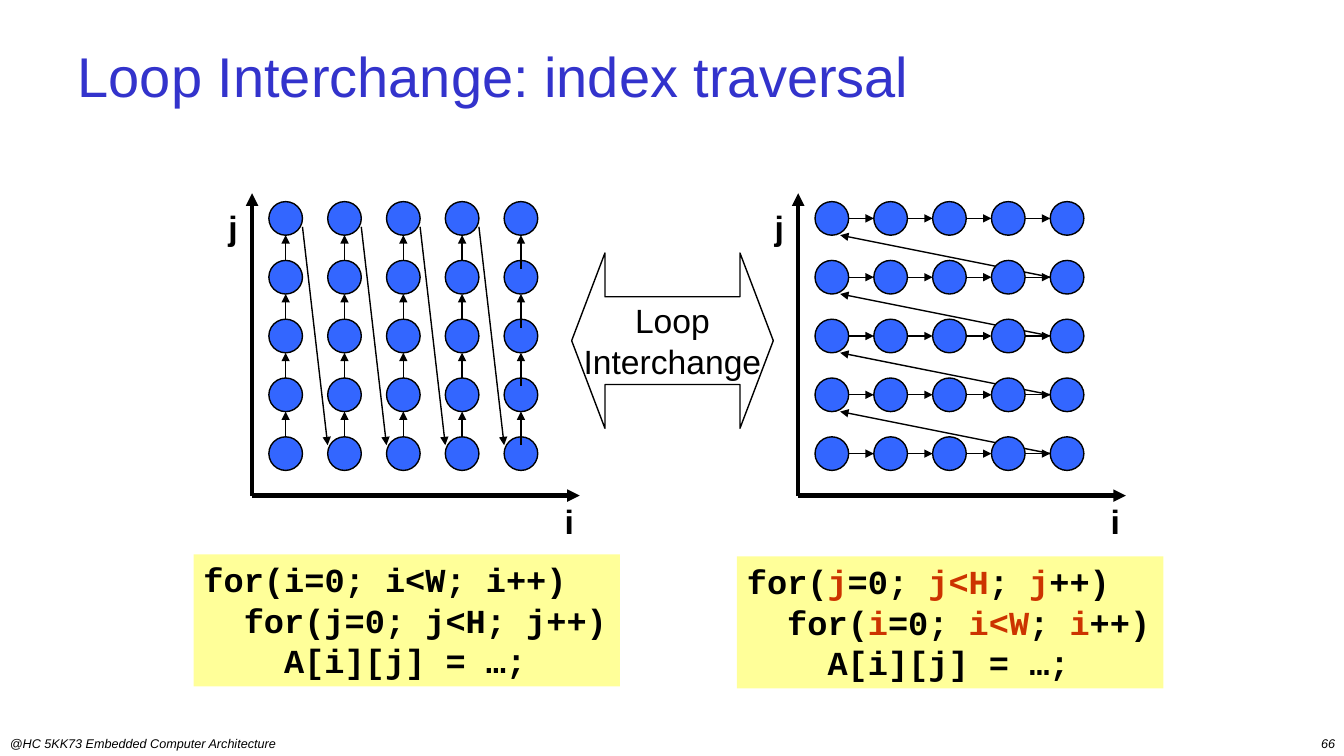
from lxml import etree
from pptx import Presentation
from pptx.dml.color import RGBColor
from pptx.enum.shapes import MSO_CONNECTOR, MSO_SHAPE
from pptx.enum.text import MSO_ANCHOR, PP_ALIGN
from pptx.oxml.ns import qn
from pptx.util import Inches, Pt

STRAIGHT = MSO_CONNECTOR.STRAIGHT
OVAL, RECTANGLE = MSO_SHAPE.OVAL, MSO_SHAPE.RECTANGLE
DOUBLE_ARROW = MSO_SHAPE.LEFT_RIGHT_ARROW
LEFT, CENTER, RIGHT = PP_ALIGN.LEFT, PP_ALIGN.CENTER, PP_ALIGN.RIGHT
TOP, MIDDLE = MSO_ANCHOR.TOP, MSO_ANCHOR.MIDDLE

BLACK = RGBColor(0x00, 0x00, 0x00)
TITLE_BLUE = RGBColor(0x33, 0x33, 0xCC)
DOT_BLUE = RGBColor(0x33, 0x66, 0xFF)
CODE_YELLOW = RGBColor(0xFF, 0xFF, 0x99)
SWAPPED_RED = RGBColor(0xCC, 0x33, 0x00)

TITLE = "Loop Interchange: index traversal"
ARROW_LINES = ["Loop", "Interchange"]
FOOTER = "@HC 5KK73 Embedded Computer Architecture"
PAGE_NUMBER = "66"

# Each code line is a list of pieces; every second piece is a swapped index.
CODE_BEFORE = [["for(i=0; i<W; i++)"], ["for(j=0; j<H; j++)"], ["A[i][j] = …;"]]
CODE_AFTER = [
    ["for(", "j", "=0; ", "j<H", "; ", "j", "++)"],
    ["for(", "i", "=0; ", "i<W", "; ", "i", "++)"],
    ["A[i][j] = …;"],
]
CODE_BOXES = [(CODE_BEFORE, 1.92, 5.5), (CODE_AFTER, 7.31, 5.52)]
CODE_SIZE = (4.23, 1.31)
CODE_INDENT = Inches(0.4)

# The plots sit on a grid of twelve cells to the inch.
CELL = Inches(1) / 12
DOTS = 5
PITCH = 7
DOT = 4
AXIS_Y = 59
AXIS_WIDTH, AXIS_HEIGHT = 39, 36
FIRST_DOT_X = 4
FIRST_DOT_Y = AXIS_Y - 5
COLUMN_PLOT_X, ROW_PLOT_X = 30, 95


def write(shape, lines, size, align=LEFT, anchor=TOP, wrap=True,
          font="Arial", bold=False, italic=False, indent=0):
    """Fill a shape with lines of pieces, each line indented one step further."""
    frame = shape.text_frame
    frame.word_wrap = wrap
    frame.vertical_anchor = anchor
    for number, pieces in enumerate(lines):
        paragraph = frame.add_paragraph() if number else frame.paragraphs[0]
        paragraph.alignment = align
        paragraph.font.name = font
        paragraph.font.size = Pt(size)
        paragraph.font.bold = bold
        paragraph.font.italic = italic
        paragraph.font.color.rgb = BLACK
        if indent:
            properties = paragraph._p.get_or_add_pPr()
            properties.set("marL", str(number * indent))
            properties.set("indent", "0")
        for position, piece in enumerate(pieces):
            run = paragraph.add_run()
            run.text = piece
            if position % 2:
                run.font.color.rgb = SWAPPED_RED


def add_label(slide, text, left, top, width, height, size, **style):
    box = slide.shapes.add_textbox(
        Inches(left), Inches(top), Inches(width), Inches(height))
    write(box, [[text]], size, **style)


def add_box(slide, kind, left, top, width, height, fill=None, outlined=True):
    shape = slide.shapes.add_shape(
        kind, round(left), round(top), round(width), round(height))
    shape.shadow.inherit = False
    if fill is None:
        shape.fill.background()
    else:
        shape.fill.solid()
        shape.fill.fore_color.rgb = fill
    if outlined:
        shape.line.color.rgb = BLACK
        shape.line.width = Pt(1)
    else:
        shape.line.fill.background()
    return shape


def add_arrow(slide, x1, y1, x2, y2, width=1):
    """Draw an arrow between two grid points."""
    arrow = slide.shapes.add_connector(
        STRAIGHT, *(round(value * CELL) for value in (x1, y1, x2, y2)))
    arrow.line.color.rgb = BLACK
    arrow.line.width = Pt(width)
    etree.SubElement(arrow.line._get_or_add_ln(), qn("a:tailEnd"), type="triangle")
    etree.SubElement(arrow._element.spPr, qn("a:effectLst"))


def add_dots(slide, origin):
    for row in range(DOTS):
        for column in range(DOTS):
            left = origin + FIRST_DOT_X + column * PITCH - DOT / 2
            top = FIRST_DOT_Y - row * PITCH - DOT / 2
            add_box(slide, OVAL, left * CELL, top * CELL,
                    DOT * CELL, DOT * CELL, DOT_BLUE)


def add_axes(slide, origin):
    add_arrow(slide, origin, AXIS_Y, origin + AXIS_WIDTH, AXIS_Y, 3)
    add_arrow(slide, origin, AXIS_Y, origin, AXIS_Y - AXIS_HEIGHT, 3)
    for name, x, y in (("i", origin + 36, AXIS_Y), ("j", origin - 4, 24)):
        add_label(slide, name, x / 12, y / 12, 0.29, 0.5, 24,
                  align=CENTER, anchor=MIDDLE, wrap=False, bold=True)


def add_column_links(slide, origin, column):
    x = origin + FIRST_DOT_X + column * PITCH
    for row in range(DOTS - 1):
        y = FIRST_DOT_Y - row * PITCH
        add_arrow(slide, x, y - 1, x, y - 5)


def add_column_plot(slide, origin):
    last = DOTS - 1
    for column in range(last):
        add_column_links(slide, origin, column)
    add_dots(slide, origin)
    add_axes(slide, origin)
    add_column_links(slide, origin, last)
    top_row_y = FIRST_DOT_Y - last * PITCH
    for column in range(last):
        x = origin + FIRST_DOT_X + column * PITCH + DOT / 2
        add_arrow(slide, x, top_row_y + 1, x + 3, FIRST_DOT_Y - 1)


def add_row_plot(slide, origin):
    last = DOTS - 1
    first_x = origin + FIRST_DOT_X
    for row in range(last):
        y = FIRST_DOT_Y - row * PITCH
        add_arrow(slide, first_x + last * PITCH - DOT / 2, y, first_x + 1, y - 5)
    add_dots(slide, origin)
    for row in range(DOTS):
        y = FIRST_DOT_Y - row * PITCH
        for column in range(last):
            x = first_x + column * PITCH + DOT / 2
            add_arrow(slide, x, y, x + PITCH - DOT, y)
    add_axes(slide, origin)


def main():
    presentation = Presentation()
    presentation.slide_width = Inches(13.33)
    presentation.slide_height = Inches(7.5)
    slide = presentation.slides.add_slide(presentation.slide_layouts[5])

    title = slide.shapes.title
    title.left, title.top = Inches(0.67), Inches(0.33)
    title.width, title.height = Inches(12.22), Inches(0.83)
    write(title, [[TITLE]], 40, anchor=MIDDLE)
    title.text_frame.paragraphs[0].font.color.rgb = TITLE_BLUE

    add_label(slide, FOOTER, 0, 7.25, 4, 0.25, 9, italic=True)
    add_label(slide, PAGE_NUMBER, 10.56, 7.25, 2.78, 0.25, 9,
              align=RIGHT, italic=True)

    interchange = add_box(slide, DOUBLE_ARROW, Inches(5.67), Inches(2.51),
                          Inches(2), Inches(1.74))
    interchange.adjustments[0] = 0.5
    interchange.adjustments[1] = 0.19
    write(interchange, [[line] for line in ARROW_LINES], 24,
          align=CENTER, anchor=MIDDLE, wrap=False)

    for code, left, top in CODE_BOXES:
        box = add_box(slide, RECTANGLE, Inches(left), Inches(top),
                      *map(Inches, CODE_SIZE), CODE_YELLOW, outlined=False)
        write(box, code, 24, font="Courier New", bold=True, indent=CODE_INDENT)

    add_row_plot(slide, ROW_PLOT_X)
    add_column_plot(slide, COLUMN_PLOT_X)
    presentation.save("out.pptx")


if __name__ == "__main__":
    main()
